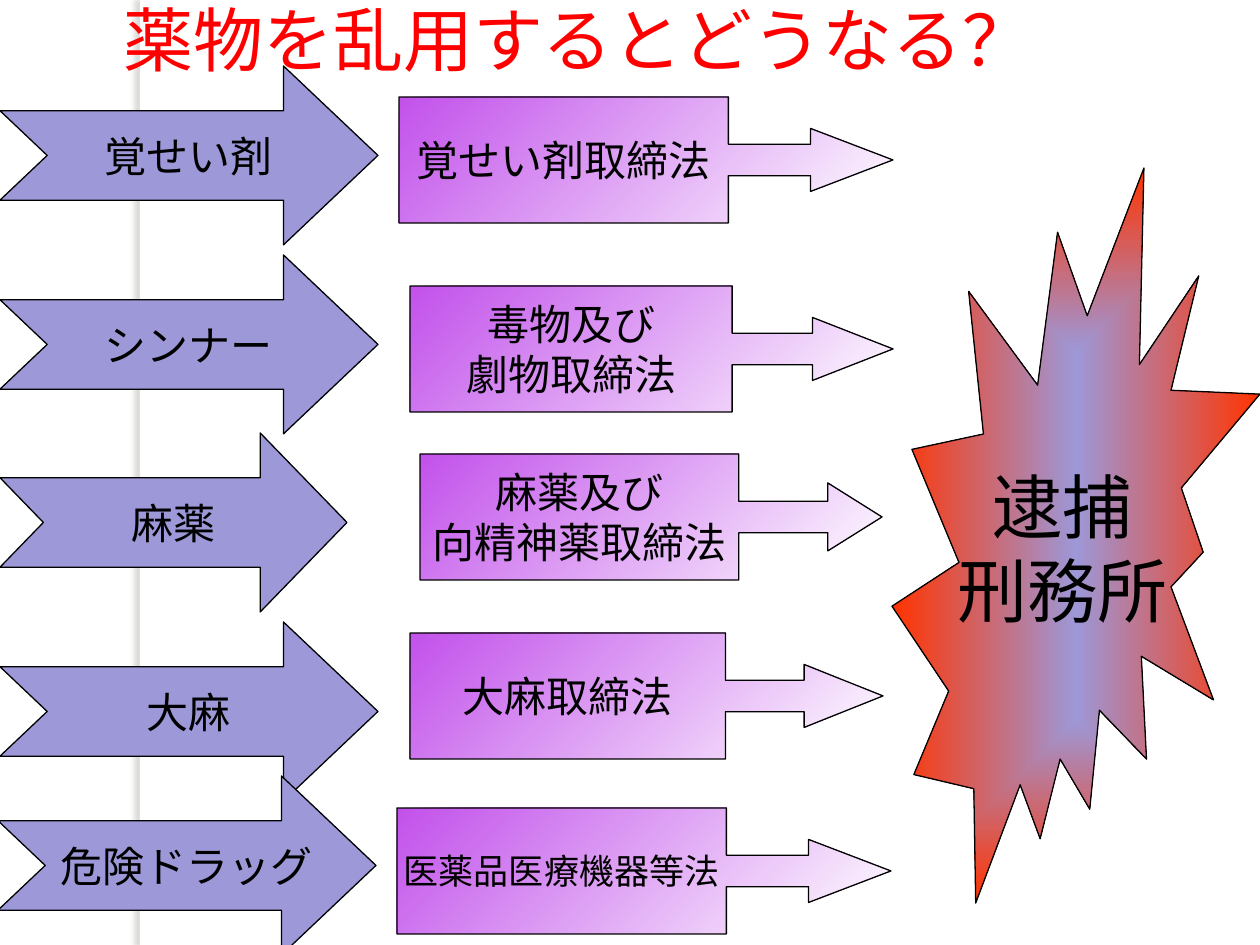
from collections import namedtuple
from dataclasses import dataclass

from lxml.etree import SubElement
from pptx import Presentation
from pptx.dml.color import RGBColor as RGB
from pptx.enum.shapes import MSO_SHAPE as Shape
from pptx.enum.text import MSO_ANCHOR as Anchor, MSO_AUTO_SIZE as AutoSize, PP_ALIGN as Align
from pptx.oxml.ns import qn
from pptx.util import Pt

EMU_PER_PX = 914400 / 126
SLIDE_W, SLIDE_H = 1260, 945

Box = namedtuple("Box", "x y w h")
Row = namedtuple("Row", "drug arrow law callout options")


@dataclass(frozen=True)
class Theme:
    title: str = "FF0000"
    ink: str = "000000"
    paper: str = "FFFFFF"
    drug: str = "9D98D8"
    law: str = "C251EB"
    arrest: str = "FF3300"
    shadow: str = "736F63"
    title_font: str = "Arial"
    body_font: str = "Times New Roman"
    big: int = 40
    medium: int = 24
    small: int = 20
    outline: float = 0.75


THEME = Theme()

# Boxes of arrow and callout are relative to the row area's top left corner
ROWS = [
    Row("覚せい剤", Box(0, 0, 378, 179), "覚せい剤取締法", Box(399, 31, 494, 126), {}),
    Row("シンナー", Box(0, 189, 378, 179), "毒物及び\n劇物取締法", Box(410, 220, 483, 126), {}),
    Row("麻薬", Box(0, 367, 347, 179), "麻薬及び\n向精神薬取締法", Box(420, 388, 462, 126),
        {"head": (0.27, 0.43), "body": 0.69}),
    Row("大麻", Box(0, 556, 378, 179), "大麻取締法", Box(410, 567, 473, 126), {}),
    Row("危険ドラッグ", Box(-2, 710, 378, 179), "医薬品医療機器等法", Box(397, 742, 494, 126),
        {"size": THEME.small}),
]


def emu(px):
    return round(px * EMU_PER_PX)


def place(shape, box):
    shape.left, shape.top, shape.width, shape.height = map(emu, box)


def write(shape, text, *, size=THEME.medium, font=THEME.body_font, color=THEME.ink):
    """Centre unwrapped text in a shape, one paragraph per line."""
    frame = shape.text_frame
    frame.text = text
    frame.word_wrap = False
    frame.auto_size = AutoSize.NONE
    frame.vertical_anchor = Anchor.MIDDLE
    for line in frame.paragraphs:
        line.alignment = Align.CENTER
        line.font.size = Pt(size)
        line.font.name = font
        line.font.color.rgb = RGB.from_string(color)


def add_outlined(slide, kind, box, adjustments=()):
    shape = slide.shapes.add_shape(kind, *map(emu, box))
    shape.shadow.inherit = False
    shape.line.color.rgb = RGB.from_string(THEME.ink)
    shape.line.width = Pt(THEME.outline)
    for index, value in enumerate(adjustments):
        shape.adjustments[index] = value
    return shape


def fill_solid(shape, color):
    shape.fill.solid()
    shape.fill.fore_color.rgb = RGB.from_string(color)


def fill_gradient(shape, *colors):
    shape.fill.gradient()
    for stop, color in zip(shape.fill.gradient_stops, colors):
        stop.color.rgb = RGB.from_string(color)
    shape.fill.gradient_angle = 315


def radiate(shape):
    """Make a linear gradient follow the outline from the centre."""
    gradient = shape._element.spPr.find(qn("a:gradFill"))
    gradient.remove(gradient.find(qn("a:lin")))
    centre = SubElement(gradient, qn("a:path"), path="shape")
    SubElement(centre, qn("a:fillToRect"), dict.fromkeys("ltrb", "50000"))


def draw_strip(slide, box):
    strip = slide.shapes.add_shape(Shape.RECTANGLE, *map(emu, box))
    fill_solid(strip, THEME.paper)
    strip.line.fill.background()
    strip.shadow.inherit = False
    effects = strip._element.spPr.find(qn("a:effectLst"))
    shadow = SubElement(effects, qn("a:outerShdw"), blurRad=str(Pt(3)), dist=str(Pt(3)),
                        dir="10800000", algn="ctr", rotWithShape="0")
    tint = SubElement(shadow, qn("a:srgbClr"), val=THEME.shadow)
    SubElement(tint, qn("a:alpha"), val="25000")
    # The strip lies behind the title
    slide.shapes._spTree.insert(2, strip._element)


def draw_title(slide, box):
    title = slide.shapes.title
    place(title, box)
    write(title, "薬物を乱用するとどうなる？", size=THEME.big,
          font=THEME.title_font, color=THEME.title)


def draw_drug(slide, box, name):
    # The arrowhead takes a quarter of the length
    arrow = add_outlined(slide, Shape.NOTCHED_RIGHT_ARROW, box, (0.5, box.w / 4 / box.h))
    fill_solid(arrow, THEME.drug)
    write(arrow, name)


def draw_law(slide, box, name, head=None, body=0.667, size=THEME.medium):
    # The arrowhead normally takes a sixth of the length
    half_width, length = head or (0.25, box.w / 6 / box.h)
    callout = add_outlined(slide, Shape.RIGHT_ARROW_CALLOUT, box,
                           (0.25, half_width, length, body))
    fill_gradient(callout, THEME.law, THEME.paper)
    write(callout, name, size=size)


def draw_rows(slide, area):
    for row in ROWS:
        arrow, callout = (part._replace(x=area.x + part.x, y=area.y + part.y)
                          for part in (row.arrow, row.callout))
        draw_law(slide, callout, row.law, **row.options)
        draw_drug(slide, arrow, row.drug)


def draw_arrest(slide, box):
    burst = add_outlined(slide, Shape.EXPLOSION2, box)
    fill_gradient(burst, THEME.drug, THEME.arrest)
    radiate(burst)
    write(burst, "逮捕\n刑務所", size=THEME.big)


def main():
    deck = Presentation()
    deck.slide_width, deck.slide_height = emu(SLIDE_W), emu(SLIDE_H)
    slide = deck.slides.add_slide(deck.slide_layouts[5])

    draw_strip(slide, Box(140, 0, 10, SLIDE_H))
    # Wide enough to hold the title on one line
    draw_title(slide, Box(78, -14, 1000, 105))
    draw_rows(slide, Box(0, 66, 893, 889))
    draw_arrest(slide, Box(892, 168, 368, 735))

    deck.save("out.pptx")


if __name__ == "__main__":
    main()
